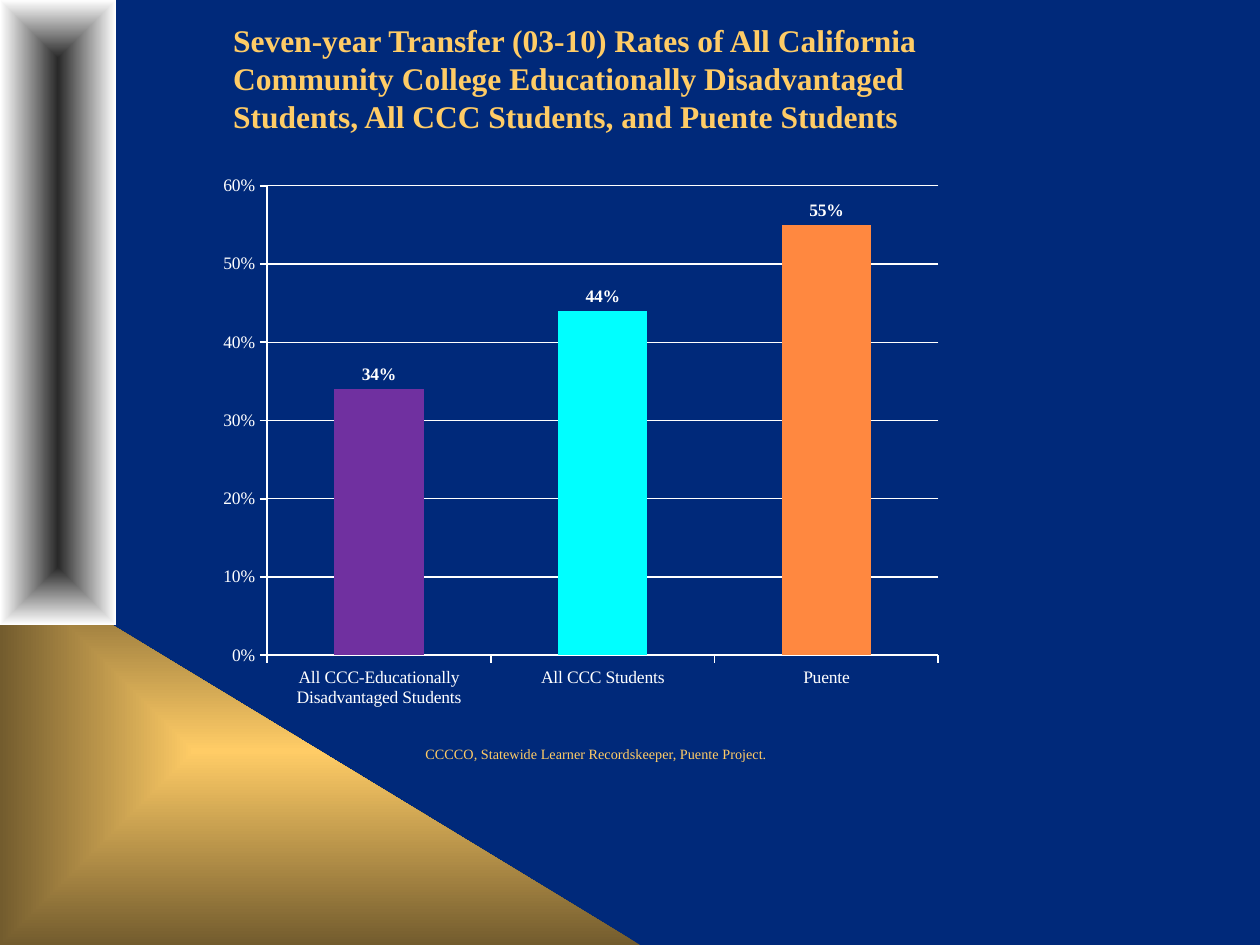
from lxml.etree import SubElement
from pptx import Presentation
from pptx.chart.data import CategoryChartData
from pptx.dml.color import RGBColor
from pptx.enum.chart import XL_CHART_TYPE, XL_LABEL_POSITION, XL_TICK_MARK
from pptx.enum.shapes import MSO_SHAPE
from pptx.enum.text import MSO_ANCHOR, PP_ALIGN
from pptx.oxml import parse_xml
from pptx.oxml.ns import nsdecls, qn
from pptx.util import Inches, Pt

NAVY = RGBColor(0x00, 0x29, 0x7A)
GOLD = RGBColor(0xFF, 0xCC, 0x66)
BRONZE = RGBColor(0x73, 0x5C, 0x2E)
COAL = RGBColor(0x29, 0x29, 0x29)
WHITE = RGBColor(0xFF, 0xFF, 0xFF)
PURPLE = RGBColor(0x70, 0x30, 0xA0)
CYAN = RGBColor(0x00, 0xFF, 0xFF)
ORANGE = RGBColor(0xFF, 0x88, 0x40)
FACE = "Times New Roman"

WIDE, HIGH = 10, 7.5
TITLE = ("Seven-year Transfer (03-10) Rates of All California Community "
         "College Educationally Disadvantaged Students, All CCC Students, "
         "and Puente Students")
RATES = [("All CCC-Educationally Disadvantaged Students", 0.34, PURPLE),
         ("All CCC Students", 0.44, CYAN),
         ("Puente", 0.55, ORANGE)]
PLOT = {"x": 0.075, "y": 0.05, "w": 0.888, "h": 0.828}


def apply(item, form):
    for name, value in form.items():
        setattr(item, name, value)


def style(font, size, color, **form):
    apply(font, {"name": FACE, "size": Pt(size), **form})
    font.color.rgb = color


def box(left, top, width, height):
    return [Inches(n) for n in (left, top, width, height)]


def panel(slide, kind, place, inner, outer):
    """Add a shape whose colour runs from its centre to its edges."""
    shape = slide.shapes.add_shape(kind, *box(*place))
    shape.shadow.inherit = False
    shape.line.fill.background()
    shape.fill.gradient()
    stops = zip(shape.fill.gradient_stops, (inner, outer), (0, 1))
    for stop, color, share in stops:
        stop.color.rgb = color
        stop.position = share
    grad = shape.fill._xPr.find(qn("a:gradFill"))
    grad.replace(grad.find(qn("a:lin")), parse_xml(
        f'<a:path {nsdecls("a")} path="rect"><a:fillToRect l="50000" '
        't="50000" r="50000" b="50000"/></a:path>'))


def head(slide):
    title = slide.shapes.title
    apply(title, dict(zip(("left", "top", "width", "height"),
                          box(1.75, 0.12, 6, 1))))
    frame = title.text_frame
    frame.text = TITLE
    apply(frame, {"word_wrap": True, "vertical_anchor": MSO_ANCHOR.BOTTOM})
    para = frame.paragraphs[0]
    apply(para, {"alignment": PP_ALIGN.LEFT, "line_spacing": 1.0})
    style(para.runs[0].font, 18, GOLD, bold=True)


def source(slide):
    frame = slide.shapes.add_textbox(*box(3.25, 5.84, 6, 0.88)).text_frame
    frame.word_wrap = True
    para = frame.paragraphs[0]
    para.space_before = Pt(2.8)
    for text, slant in ((" CCCCO", False), (", ", True),
                        ("Statewide Learner Recordskeeper, Puente Project.",
                         False)):
        run = para.add_run()
        run.text = text
        style(run.font, 14, GOLD, italic=slant)
        run.font._element.set("baseline", "30000")


def rule(line, width):
    line.color.rgb = WHITE
    line.width = Pt(width)


def fit(chart):
    """Fix the inner plot area as shares of the chart."""
    area = chart._chartSpace.chart.plotArea
    old = area.find(qn("c:layout"))
    if old is not None:
        area.remove(old)
    layout = parse_xml(f'<c:layout {nsdecls("c")}><c:manualLayout/></c:layout>')
    parts = [("layoutTarget", "inner"), ("xMode", "edge"), ("yMode", "edge")]
    for tag, value in parts + list(PLOT.items()):
        SubElement(layout[0], qn(f"c:{tag}")).set("val", str(value))
    area.insert(0, layout)


def graph(slide):
    data = CategoryChartData(number_format="0%")
    data.categories = [name for name, _, _ in RATES]
    data.add_series("Series 1", [rate for _, rate, _ in RATES])
    chart = slide.shapes.add_chart(XL_CHART_TYPE.COLUMN_CLUSTERED,
                                   *box(1.67, 1.25, 6, 4.5), data).chart
    apply(chart, {"has_legend": False, "has_title": False})
    style(chart.font, 10, WHITE)
    fit(chart)

    # Axes
    for axis in (chart.category_axis, chart.value_axis):
        apply(axis, {"major_tick_mark": XL_TICK_MARK.OUTSIDE,
                     "minor_tick_mark": XL_TICK_MARK.NONE})
        rule(axis.format.line, 1)
    scale = chart.value_axis
    apply(scale, {"minimum_scale": 0, "maximum_scale": 0.6,
                  "major_unit": 0.1, "has_major_gridlines": True})
    apply(scale.tick_labels, {"number_format": "0%",
                              "number_format_is_linked": False})
    rule(scale.major_gridlines.format.line, 0.75)

    # Columns and their labels
    plot = chart.plots[0]
    apply(plot, {"gap_width": 150, "vary_by_categories": False,
                 "has_data_labels": True})
    apply(plot.data_labels, {"show_value": True, "number_format": "0%",
                             "number_format_is_linked": False,
                             "position": XL_LABEL_POSITION.OUTSIDE_END})
    style(plot.data_labels.font, 10, WHITE, bold=True)
    for spot, (_, _, color) in enumerate(RATES):
        fill = plot.series[0].points[spot].format.fill
        fill.solid()
        fill.fore_color.rgb = color


def main():
    deck = Presentation()
    apply(deck, {"slide_width": Inches(WIDE), "slide_height": Inches(HIGH)})
    slide = deck.slides.add_slide(deck.slide_layouts[5])
    slide.background.fill.solid()
    slide.background.fill.fore_color.rgb = NAVY

    # Side decoration
    panel(slide, MSO_SHAPE.RIGHT_TRIANGLE, (0, 4.42, 5.08, HIGH - 4.42),
          GOLD, BRONZE)
    panel(slide, MSO_SHAPE.RECTANGLE, (0, 0, 0.92, 4.96), COAL, WHITE)

    # Content
    head(slide)
    source(slide)
    graph(slide)
    deck.save("out.pptx")


if __name__ == "__main__":
    main()
